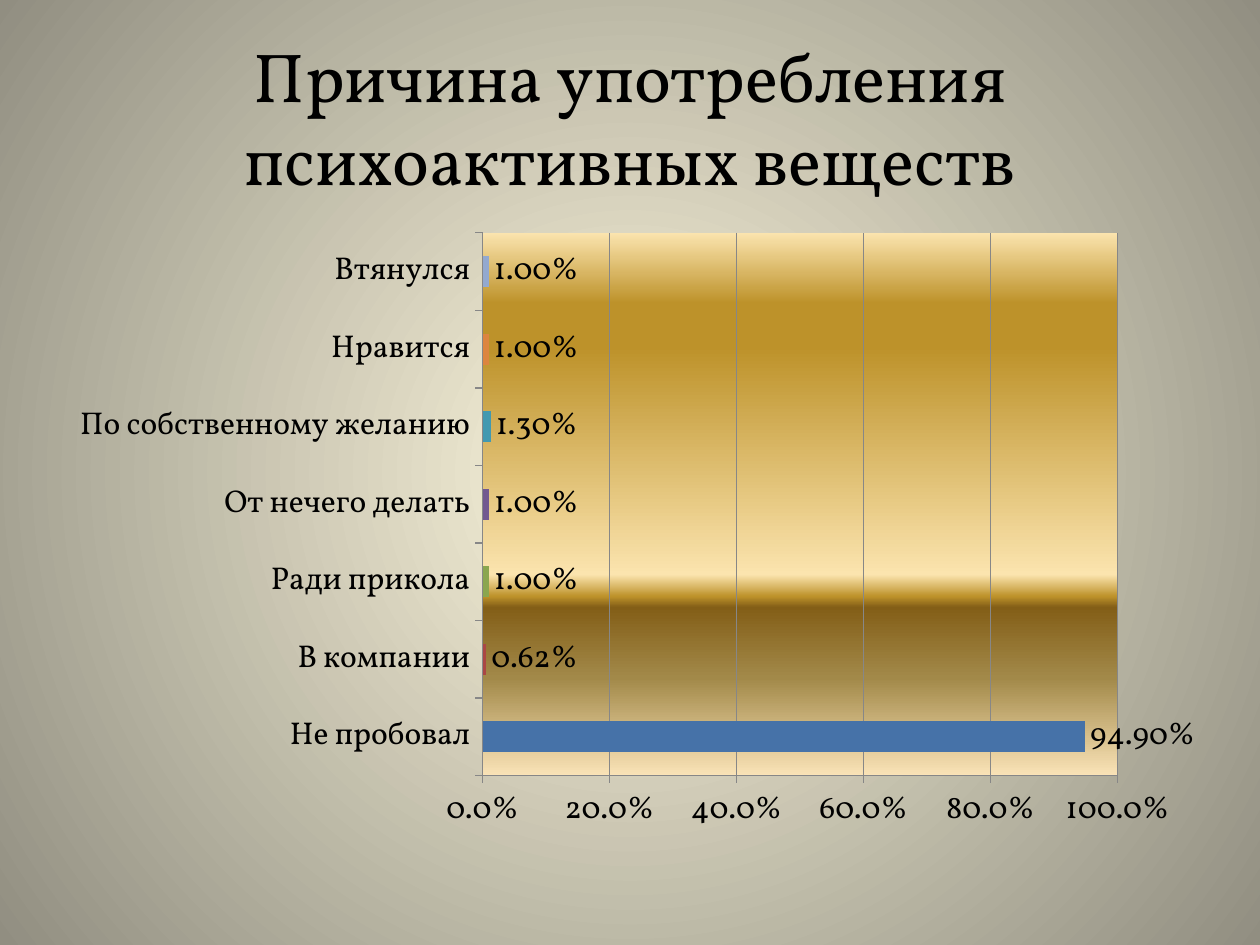
import pptx
import pptx.chart.data
import pptx.dml.color
import pptx.enum.chart
import pptx.enum.text
import pptx.oxml
import pptx.oxml.ns
import pptx.util

Inches = pptx.util.Inches
Pt = pptx.util.Pt
enum = pptx.enum.chart
face = "Vollkorn"


def paint(hue):
    return pptx.dml.color.RGBColor.from_string(hue)


def blend(stops, shade):
    marks = "".join(
        f'<a:gs pos="{pos * 1000}"><a:srgbClr val="{hue}"/></a:gs>' for pos, hue in stops
    )
    return f'<a:gradFill rotWithShape="1"><a:gsLst>{marks}</a:gsLst>{shade}</a:gradFill>'


deck = pptx.Presentation()
deck.slide_width = Inches(10)
deck.slide_height = Inches(7.5)
slide = deck.slides.add_slide(deck.slide_layouts[5])

glow = blend(
    [(0, "FCF7DD"), (100, "918E81")],
    '<a:path path="circle"><a:fillToRect l="50000" t="50000" r="50000" b="50000"/></a:path>',
)
back = pptx.oxml.parse_xml(
    f'<p:bg {pptx.oxml.ns.nsdecls("p", "a")}><p:bgPr>{glow}<a:effectLst/></p:bgPr></p:bg>'
)
slide.element.cSld.insert(0, back)

title = slide.shapes.title
title.left, title.top = Inches(0.5), Inches(0.3)
title.width, title.height = Inches(9), Inches(1.25)
frame = title.text_frame
frame.text = "Причина употребления психоактивных веществ"
frame.word_wrap = True
frame.vertical_anchor = pptx.enum.text.MSO_ANCHOR.MIDDLE
line = frame.paragraphs[0]
line.alignment = pptx.enum.text.PP_ALIGN.CENTER
line.font.size = Pt(39.6)
line.font.name = face
line.font.color.rgb = paint("000000")

rows = [
    ("Не пробовал", 0.949, "4672A8"),
    ("В компании", 0.0062, "AB4744"),
    ("Ради прикола", 0.01, "8AA64F"),
    ("От нечего делать", 0.01, "725990"),
    ("По собственному желанию", 0.013, "4299B0"),
    ("Нравится", 0.01, "DC853F"),
    ("Втянулся", 0.01, "93A9CF"),
]
names, rates, hues = zip(*rows)
data = pptx.chart.data.CategoryChartData(number_format="0.00%")
data.categories = names
data.add_series("Series 1", rates)
chart = slide.shapes.add_chart(
    enum.XL_CHART_TYPE.BAR_CLUSTERED, Inches(0.5), Inches(1.75), Inches(9), Inches(4.95), data
).chart
chart.has_title = False
chart.has_legend = False
chart.font.size = Pt(18)
chart.font.name = face
chart.font.color.rgb = paint("000000")

plot = chart.plots[0]
plot.gap_width = 150
plot.vary_by_categories = True
for spot, hue in enumerate(hues):
    fill = plot.series[0].points[spot].format.fill
    fill.solid()
    fill.fore_color.rgb = paint(hue)

plot.has_data_labels = True
tags = plot.data_labels
tags.show_value = True
tags.number_format = "0.00%"
tags.number_format_is_linked = False
tags.position = enum.XL_LABEL_POSITION.OUTSIDE_END

scale = chart.value_axis
scale.minimum_scale, scale.maximum_scale, scale.major_unit = 0, 1, 0.2
scale.has_major_gridlines = True
scale.tick_labels.number_format = "0.0%"
scale.tick_labels.number_format_is_linked = False
for axis in (chart.category_axis, scale):
    axis.major_tick_mark = enum.XL_TICK_MARK.OUTSIDE
    axis.format.line.color.rgb = paint("878787")
    axis.format.line.width = Pt(0.75)
grid = scale.major_gridlines.format.line
grid.color.rgb = paint("878787")
grid.width = Pt(0.75)

area = chart.element.chart.plotArea
for old in area.findall(pptx.oxml.ns.qn("c:layout")):
    area.remove(old)
sides = "".join(
    f'<c:{key} val="{part}"/>' for key, part in (("x", 0.37), ("y", 0.02), ("w", 0.56), ("h", 0.87))
)
area.insert(0, pptx.oxml.parse_xml(
    f'<c:layout {pptx.oxml.ns.nsdecls("c")}><c:manualLayout><c:layoutTarget val="inner"/>'
    f'<c:xMode val="edge"/><c:yMode val="edge"/>{sides}</c:manualLayout></c:layout>'
))
gold = blend(
    [(0, "FBE4AE"), (13, "BD922A"), (21, "BD922A"), (63, "FBE4AE"),
     (67, "BD922A"), (69, "835E17"), (82, "A28949"), (100, "FAE3B7")],
    '<a:lin ang="5400000" scaled="0"/>',
)
area.append(pptx.oxml.parse_xml(f'<c:spPr {pptx.oxml.ns.nsdecls("c", "a")}>{gold}</c:spPr>'))

deck.save("out.pptx")
